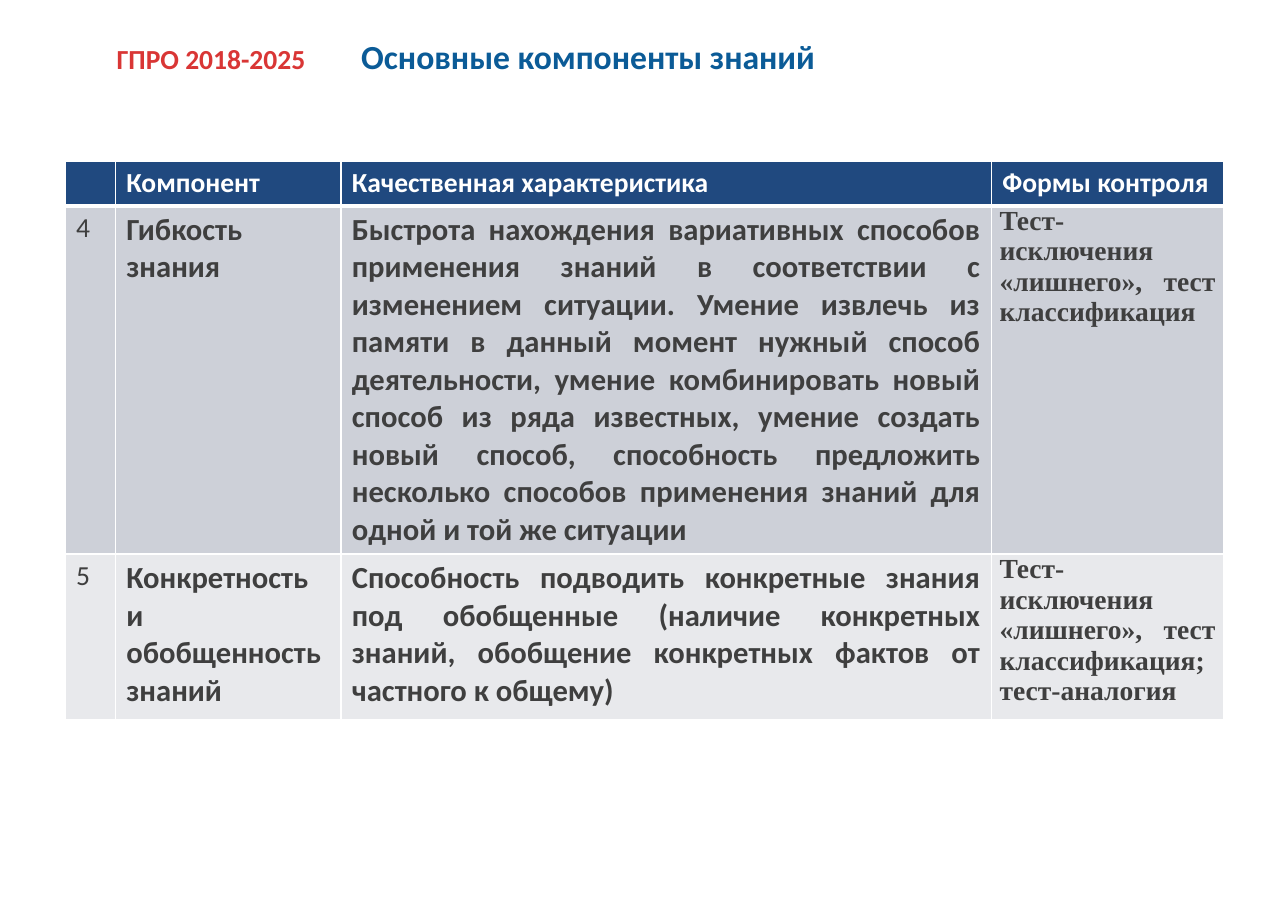
from lxml.etree import SubElement
from pptx import Presentation
from pptx.dml.color import RGBColor
from pptx.enum.text import MSO_ANCHOR, MSO_AUTO_SIZE, PP_ALIGN
from pptx.oxml.ns import qn
from pptx.util import Cm, Pt

PROGRAM = "ГПРО 2018-2025"
TITLE = "Основные компоненты знаний"
ROWS = [
    ("", "Компонент", "Качественная характеристика", "Формы контроля"),
    ("4", "Гибкость знания",
     "Быстрота нахождения вариативных способов применения знаний в соответствии "
     "с изменением ситуации. Умение извлечь из памяти в данный момент нужный "
     "способ деятельности, умение комбинировать новый способ из ряда известных, "
     "умение создать новый способ, способность предложить несколько способов "
     "применения знаний для одной и той же ситуации",
     "Тест-исключения «лишнего», тест классификация"),
    ("5", "Конкретность и обобщенность знаний",
     "Способность подводить конкретные знания под обобщенные (наличие конкретных "
     "знаний, обобщение конкретных фактов от частного к общему)",
     "Тест-исключения «лишнего», тест классификация; тест-аналогия"),
]
COLUMN_WIDTHS = [1.16, 5.2, 15, 5.36]
ROW_HEIGHTS = [1.03, 8.03, 3.71]

WHITE = RGBColor(0xFF, 0xFF, 0xFF)
RED = RGBColor(0xD9, 0x36, 0x35)
BLUE = RGBColor(0x0B, 0x5B, 0x97)
DARK_GREY = RGBColor(0x3F, 0x3F, 0x3F)
ROW_FILLS = [RGBColor(0x20, 0x49, 0x7F), RGBColor(0xCD, 0xD0, 0xD8),
             RGBColor(0xE8, 0xE9, 0xEC)]

# Size, bold, font and alignment of each body column
HEADER_STYLE = (18, True, "Calibri", PP_ALIGN.LEFT)
BODY_STYLES = [
    (18, False, "Calibri", PP_ALIGN.LEFT),
    (20, True, "Calibri", PP_ALIGN.LEFT),
    (20, True, "Calibri", PP_ALIGN.JUSTIFY),
    (18, True, "Times New Roman", PP_ALIGN.JUSTIFY),
]


def write(text_frame, text, style, color):
    size, bold, font_name, alignment = style
    paragraph = text_frame.paragraphs[0]
    paragraph.alignment = alignment
    run = paragraph.add_run()
    run.text = text
    run.font.size = Pt(size)
    run.font.bold = bold
    run.font.name = font_name
    run.font.color.rgb = color


def set_borders(cell, bottom_width):
    """Draw white borders; called before the fill, as the schema orders them."""
    properties = cell._tc.get_or_add_tcPr()
    for side, width in (("L", 1), ("R", 1), ("T", 1), ("B", bottom_width)):
        line = SubElement(properties, qn(f"a:ln{side}"), w=str(Pt(width)))
        fill = SubElement(line, qn("a:solidFill"))
        SubElement(fill, qn("a:srgbClr"), val=str(WHITE))


def add_components_table(slide):
    table = slide.shapes.add_table(
        len(ROWS), len(COLUMN_WIDTHS), Cm(1.5), Cm(3.71),
        Cm(sum(COLUMN_WIDTHS)), Cm(sum(ROW_HEIGHTS))).table
    for column, width in zip(table.columns, COLUMN_WIDTHS):
        column.width = Cm(width)
    for row, height in zip(table.rows, ROW_HEIGHTS):
        row.height = Cm(height)

    for row_index, texts in enumerate(ROWS):
        is_header = row_index == 0
        for column_index, text in enumerate(texts):
            cell = table.cell(row_index, column_index)
            set_borders(cell, 3 if is_header else 1)
            cell.fill.solid()
            cell.fill.fore_color.rgb = ROW_FILLS[row_index]
            if not is_header and column_index == len(texts) - 1:
                cell.margin_left = cell.margin_right = Cm(0.19)
                cell.margin_top = cell.margin_bottom = 0
            if text:
                write(cell.text_frame, text,
                      HEADER_STYLE if is_header else BODY_STYLES[column_index],
                      WHITE if is_header else DARK_GREY)


def main():
    presentation = Presentation()
    presentation.slide_width = Cm(29.7)
    presentation.slide_height = Cm(21)
    slide = presentation.slides.add_slide(presentation.slide_layouts[5])

    program = slide.shapes.add_textbox(Cm(2.44), Cm(0.84), Cm(4.88), Cm(1.02))
    program.text_frame.word_wrap = False
    program.text_frame.auto_size = MSO_AUTO_SIZE.SHAPE_TO_FIT_TEXT
    write(program.text_frame, PROGRAM, HEADER_STYLE, RED)

    title = slide.shapes.title
    title.left, title.top, title.width, title.height = Cm(8.05), 0, Cm(21.2), Cm(2.6)
    title.text_frame.vertical_anchor = MSO_ANCHOR.MIDDLE
    title.text_frame.margin_left = title.text_frame.margin_right = Cm(0.28)
    write(title.text_frame, TITLE, (22, True, "Calibri", PP_ALIGN.LEFT), BLUE)

    add_components_table(slide)
    presentation.save("out.pptx")


if __name__ == "__main__":
    main()
